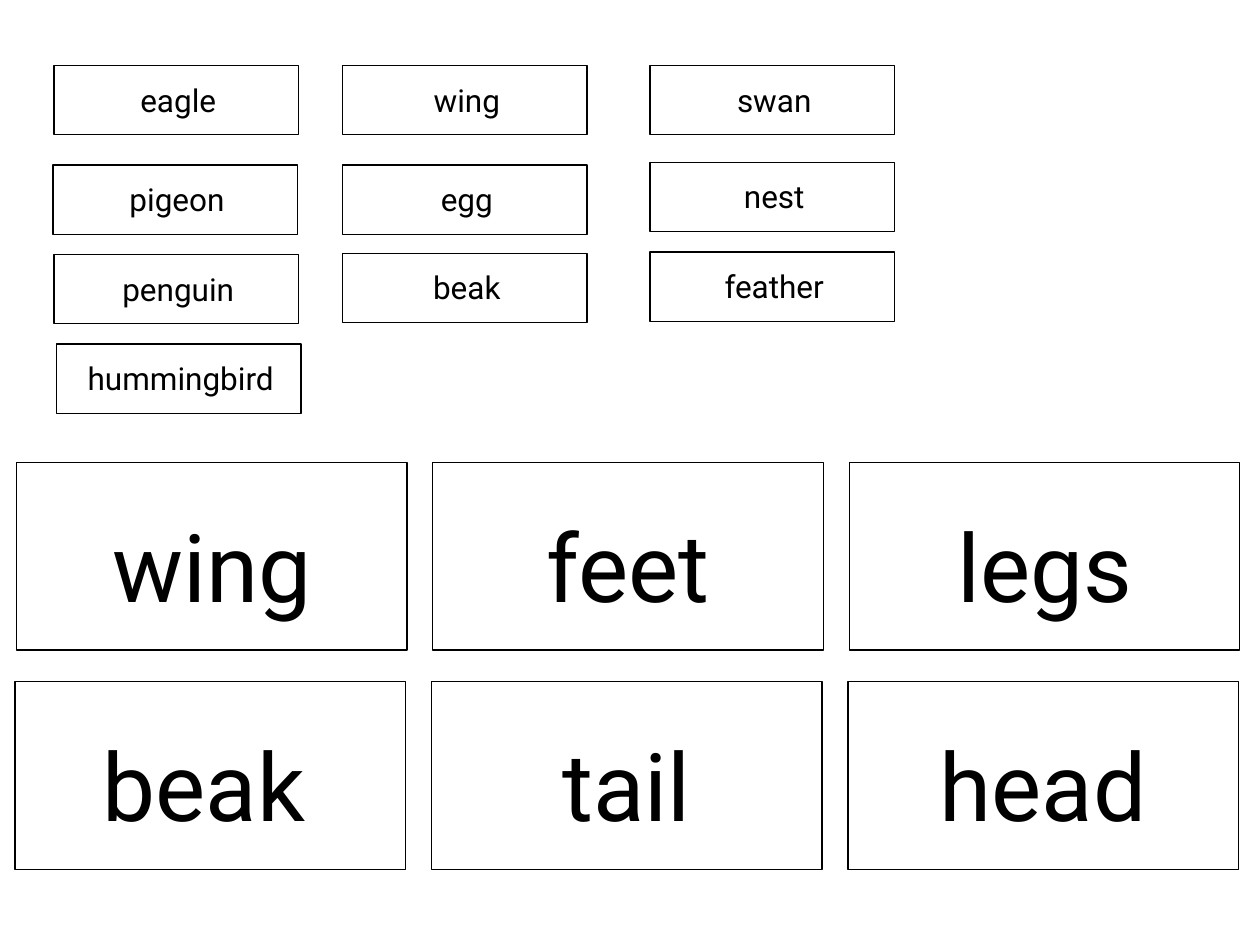
from dataclasses import dataclass

import pptx
import pptx.dml.color
import pptx.enum.shapes
import pptx.enum.text
import pptx.util
from pptx.util import Inches


@dataclass(frozen=True)
class Theme:
    ink = pptx.dml.color.RGBColor(0, 0, 0)
    font = "Roboto"
    outline = pptx.util.Pt(0.75)
    small_type = pptx.util.Pt(18)
    large_type = pptx.util.Pt(54)


@dataclass(frozen=True)
class CardStyle:
    """Card and label sizes in inches; the label is offset from the card corner."""
    width: float
    height: float
    label_width: float
    label_height: float
    label_dx: float
    label_dy: float
    type_size: int


THEME = Theme()
SMALL = CardStyle(1.94, 0.55, 1.87, 0.4, 0.05, 0.07, THEME.small_type)
LARGE = CardStyle(3.1, 1.49, 2.98, 1.01, 0.06, 0.31, THEME.large_type)

# Word, left and top of each hand-placed card
SMALL_CARDS = [
    ("eagle", 0.43, 0.52), ("pigeon", 0.42, 1.31),
    ("penguin", 0.43, 2.02), ("hummingbird", 0.45, 2.73),
    ("wing", 2.72, 0.52), ("swan", 5.16, 0.52),
    ("egg", 2.72, 1.31), ("nest", 5.16, 1.29),
    ("beak", 2.72, 2.01), ("feather", 5.16, 2.0),
]

# Left edge, top edge and words of each row
LARGE_ROWS = [
    (0.13, 3.67, ["wing", "feet", "legs"]),
    (0.12, 5.41, ["beak", "tail", "head"]),
]
LARGE_PITCH = 3.305
LABEL_SHIFT = {("beak", LARGE): -0.05}


def add_frame(slide, left, top, style):
    frame = slide.shapes.add_shape(
        pptx.enum.shapes.MSO_SHAPE.RECTANGLE,
        Inches(left), Inches(top), Inches(style.width), Inches(style.height))
    frame.shadow.inherit = False
    frame.fill.background()
    frame.line.color.rgb = THEME.ink
    frame.line.width = THEME.outline


def add_label(slide, word, left, top, style):
    label = slide.shapes.add_textbox(
        Inches(left), Inches(top),
        Inches(style.label_width), Inches(style.label_height))
    text = label.text_frame
    text.word_wrap = True
    text.auto_size = pptx.enum.text.MSO_AUTO_SIZE.SHAPE_TO_FIT_TEXT
    line = text.paragraphs[0]
    line.text = word
    line.alignment = pptx.enum.text.PP_ALIGN.CENTER
    line.font.name = THEME.font
    line.font.size = style.type_size
    line.font.color.rgb = THEME.ink


def add_card(slide, word, left, top, style):
    add_frame(slide, left, top, style)
    label_left = left + style.label_dx + LABEL_SHIFT.get((word, style), 0)
    add_label(slide, word, label_left, top + style.label_dy, style)


def main():
    deck = pptx.Presentation()
    deck.slide_width = Inches(10)
    deck.slide_height = Inches(7.5)
    slide = deck.slides.add_slide(deck.slide_layouts[6])

    for word, left, top in SMALL_CARDS:
        add_card(slide, word, left, top, SMALL)
    for left, top, words in LARGE_ROWS:
        for column, word in enumerate(words):
            add_card(slide, word, left + column * LARGE_PITCH, top, LARGE)

    deck.save("out.pptx")


if __name__ == "__main__":
    main()
